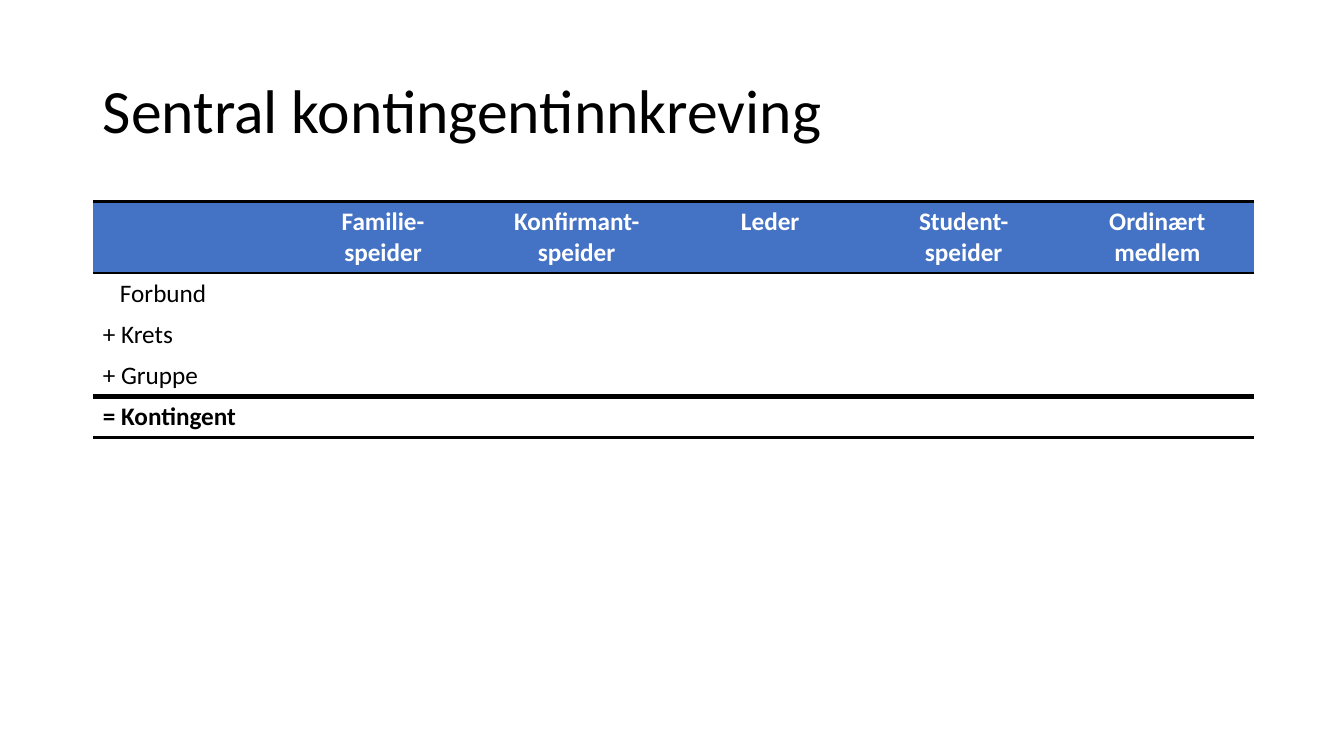
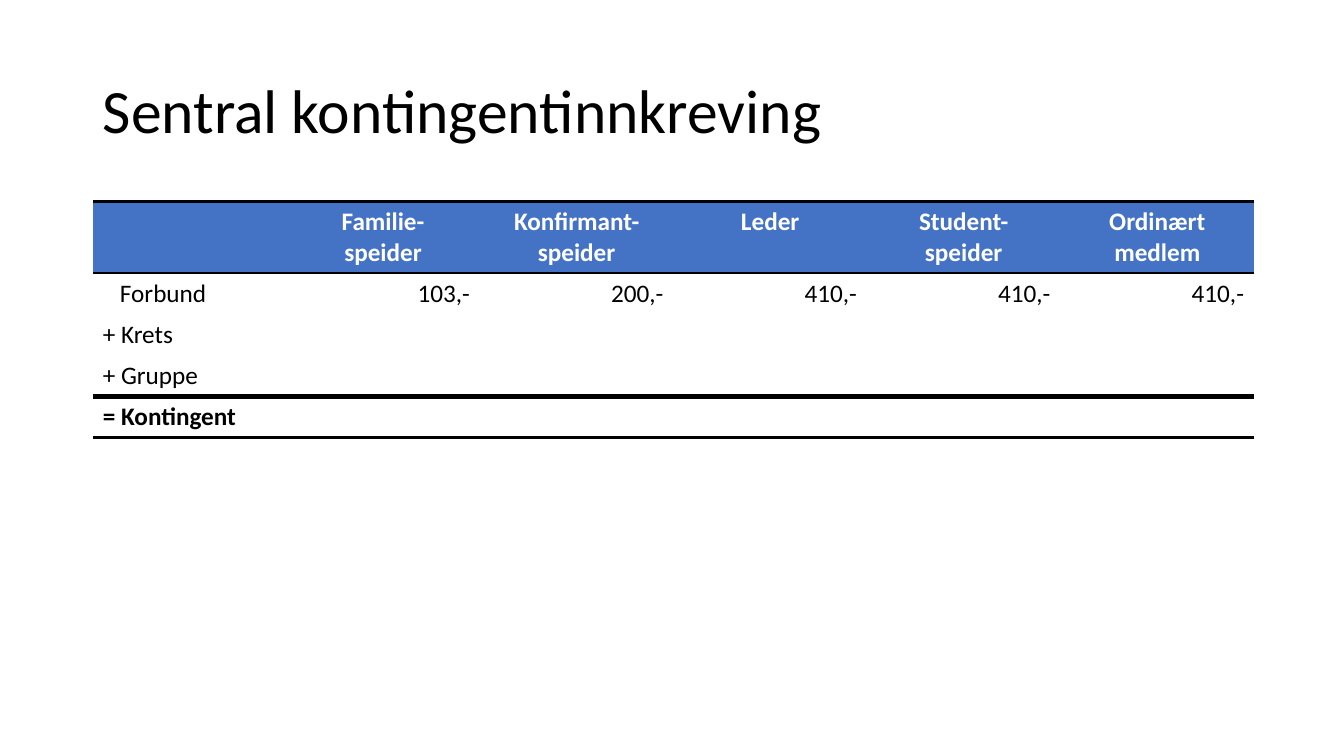
from lxml.etree import SubElement as Sub
from pptx import Presentation
from pptx.dml.color import RGBColor as RGB
from pptx.enum.text import MSO_ANCHOR as Anchor, MSO_AUTO_SIZE as Auto, PP_ALIGN as Align
from pptx.oxml.ns import qn
from pptx.util import Inches, Pt

HUES = {"ink": "000000", "head": "4472C4", "paper": "FFFFFF"}
FONT = "Calibri"
PLAIN = "{2D5ABB26-0587-4C30-8999-92F81FD0307C}"  # table style without grid
WIDE, HIGH = 13.33, 7.5
LEFT, COL, ROW = 0.92, 1.92, 0.4  # left margin and grid steps in inches
COLS = 6

TITLE = "Sentral kontingentinnkreving"
KINDS = ["Familie-\nspeider", "Konfirmant-\nspeider", "Leder",
         "Student-\nspeider", "Ordinært\nmedlem"]
LEVELS = ["Forbund", "+ Krets", "+ Gruppe", "= Kontingent"]
FEES = ["103,-", "200,-", "410,-", "410,-", "410,-"]
EDGES = {0: 2, 1: 2, 4: 4, 5: 2}  # rule width in points above each row


def cols(n):
    return Inches(n * COL)


def rows(n):
    return Inches(n * ROW)


def hue(name):
    return RGB.from_string(HUES[name])


def write(frame, text, size=18, ink="ink", bold=False, align=Align.LEFT, lead=None):
    para = frame.paragraphs[0]
    para.text = text
    para.alignment = align
    para.line_spacing = lead
    for run in para.runs:
        font = run.font
        font.name, font.size, font.bold = FONT, Pt(size), bold
        font.color.rgb = hue(ink)


def rule(cell, side, width):
    """Draw one cell border; a width of None leaves it clear."""
    line = Sub(cell._tc.get_or_add_tcPr(), qn("a:ln" + side))
    if width is None:
        Sub(line, qn("a:noFill"))
        return
    line.set("w", str(Pt(width)))
    Sub(Sub(line, qn("a:solidFill")), qn("a:srgbClr")).set("val", HUES["ink"])


class Deck:
    def __init__(self):
        self.prs = Presentation()
        self.prs.slide_width, self.prs.slide_height = Inches(WIDE), Inches(HIGH)
        self.slide = None

    def page(self, title):
        self.slide = self.prs.slides.add_slide(self.prs.slide_layouts[5])
        box = self.slide.shapes.title
        box.left, box.top = Inches(LEFT), rows(1)
        box.width, box.height = cols(COLS), rows(3.62)
        frame = box.text_frame
        frame.word_wrap, frame.auto_size = True, Auto.NONE
        frame.vertical_anchor = Anchor.MIDDLE
        write(frame, title, size=44, lead=0.9)

    def table(self, data):
        high = [1.77] + [1.02] * (len(data) - 1)
        grid = self.slide.shapes.add_table(
            len(data), COLS, Inches(LEFT), rows(5), cols(COLS), rows(sum(high))).table
        grid._tbl.tblPr.find(qn("a:tableStyleId")).text = PLAIN
        grid.horz_banding = False
        for col in grid.columns:
            col.width = cols(1)
        for r, line in enumerate(data):
            grid.rows[r].height = rows(high[r])
            for c, text in enumerate(line):
                self.cell(grid.cell(r, c), r, c, text, r == len(data) - 1)

    def cell(self, cell, r, c, text, last):
        head = r == 0
        edges = {"L": None, "R": None, "T": EDGES.get(r), "B": EDGES.get(r + 1)}
        for side, width in edges.items():
            rule(cell, side, width)
        cell.fill.solid()
        cell.fill.fore_color.rgb = hue("head" if head else "paper")
        if r == 1 and c == 0:
            cell.margin_left = Inches(0.27)  # lines up with the words after + and =
        align = Align.CENTER if head else Align.RIGHT if c else Align.LEFT
        write(cell.text_frame, text, ink="paper" if head else "ink",
              bold=head or last, align=align)

    def save(self):
        self.prs.save("out.pptx")


def main():
    deck = Deck()
    blank = [""] * len(KINDS)
    for fees in (blank, FEES):
        deck.page(TITLE)
        values = [fees] + [blank] * (len(LEVELS) - 1)
        body = [[name] + line for name, line in zip(LEVELS, values)]
        deck.table([[""] + KINDS] + body)
    deck.save()


if __name__ == "__main__":
    main()
